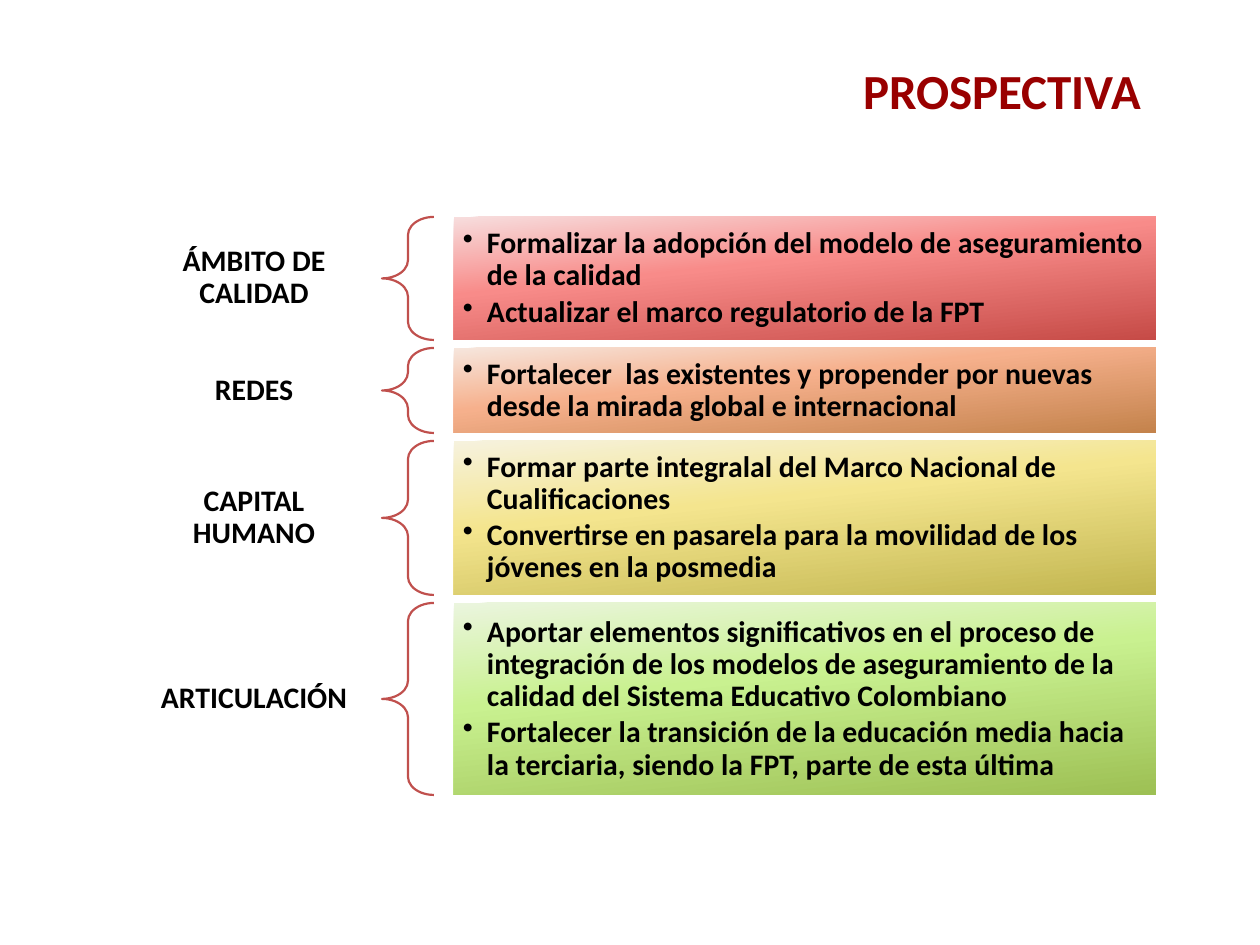
"""Build the PROSPECTIVA slide: labels, braces and shaded goal panels."""
import copy
import dataclasses

import lxml.etree
import pptx
import pptx.dml.color
import pptx.enum.shapes
import pptx.enum.text
import pptx.oxml.ns
import pptx.util

SHAPE = pptx.enum.shapes.MSO_SHAPE
ALIGN = pptx.enum.text.PP_ALIGN
ANCHOR = pptx.enum.text.MSO_ANCHOR
SCALE = 914400 / 126


@dataclasses.dataclass
class Theme:
    font: str = "Calibri"
    head: int = 28
    body: int = 17
    title: str = "990000"
    ink: str = "000000"
    line: str = "C0504D"
    red: tuple = ("F7DDDD", "F88B89", "C64B47")
    orange: tuple = ("F6E6DD", "F6B08C", "C4834C")
    gold: tuple = ("F6F2DE", "F4E58E", "C2B650")
    green: tuple = ("EBF5DE", "C9F190", "9DC054")


def px(size):
    return pptx.util.Emu(round(size * SCALE))


def rgb(code):
    return pptx.dml.color.RGBColor.from_string(code)


def write(frame, lines, *, font, size, color, align=ALIGN.LEFT,
          anchor=ANCHOR.MIDDLE, pad=(9, 9), space=1.0, gap=0, bullet=False):
    frame.word_wrap = True
    frame.vertical_anchor = anchor
    frame.margin_left = frame.margin_right = px(pad[0])
    frame.margin_top = frame.margin_bottom = px(pad[1])
    for i, line in enumerate(lines):
        para = frame.add_paragraph() if i else frame.paragraphs[0]
        para.alignment = align
        para.line_spacing = space
        if i:
            para.space_before = pptx.util.Pt(gap)
        if bullet:
            props = para._p.get_or_add_pPr()
            props.set("marL", str(px(24)))
            props.set("indent", str(-px(24)))
            mark = lxml.etree.SubElement(props, pptx.oxml.ns.qn("a:buChar"))
            mark.set("char", "•")
        run = para.add_run()
        run.text = line
        run.font.name = font
        run.font.size = pptx.util.Pt(size)
        run.font.bold = True
        run.font.color.rgb = rgb(color)


class Deck:
    def __init__(self, theme):
        self.theme = theme
        self.show = pptx.Presentation()
        self.show.slide_width, self.show.slide_height = px(1260), px(945)
        self.slide = self.show.slides.add_slide(self.show.slide_layouts[6])

    def text(self, box, line, **form):
        item = self.slide.shapes.add_textbox(*map(px, box))
        write(item.text_frame, [line], font=self.theme.font,
              align=ALIGN.CENTER, **form)

    def shape(self, kind, box):
        item = self.slide.shapes.add_shape(kind, *map(px, box))
        item.shadow.inherit = False
        return item

    def title(self, box, line):
        self.text(box, line, size=self.theme.head, color=self.theme.title,
                  anchor=ANCHOR.TOP, pad=(13, 6))

    def label(self, box, line):
        self.text(box, line, size=self.theme.body, color=self.theme.ink,
                  pad=(17, 6), space=0.9)

    def brace(self, box):
        item = self.shape(SHAPE.LEFT_BRACE, box)
        item.adjustments[0], item.adjustments[1] = 0.35, 0.5
        item.fill.background()
        item.line.color.rgb = rgb(self.theme.line)
        item.line.width = pptx.util.Pt(1.25)

    def panel(self, box, goals, tones):
        item = self.shape(SHAPE.RECTANGLE, box)
        item.line.fill.background()
        item.fill.gradient()
        item.fill.gradient_angle = 276
        first = item.fill.gradient_stops[0]._gs
        first.addnext(copy.deepcopy(first))
        for stop, tone, place in zip(item.fill.gradient_stops, tones, (0, 0.4, 1)):
            stop.color.rgb = rgb(tone)
            stop.position = place
        write(item.text_frame, goals, font=self.theme.font,
              size=self.theme.body, color=self.theme.ink, space=0.9,
              gap=2.5, bullet=True)


def main():
    theme = Theme()
    deck = Deck(theme)
    deck.title((779, 55, 446, 89), "PROSPECTIVA")
    rows = [
        ("ÁMBITO DE CALIDAD", 78, 123, theme.red, [
            "Formalizar la adopción del modelo de aseguramiento de la calidad",
            "Actualizar el marco regulatorio de la FPT"]),
        ("REDES", 47, 85, theme.orange, [
            "Fortalecer  las existentes y propender por nuevas desde la mirada "
            "global e internacional"]),
        ("CAPITAL HUMANO", 78, 154, theme.gold, [
            "Formar parte integralal del Marco Nacional de Cualificaciones",
            "Convertirse en pasarela para la movilidad de los jóvenes en la "
            "posmedia"]),
        ("ARTICULACIÓN", 47, 192, theme.green, [
            "Aportar elementos significativos en el proceso de integración de "
            "los modelos de aseguramiento de la calidad del Sistema Educativo "
            "Colombiano",
            "Fortalecer la transición de la educación media hacia la "
            "terciaria, siendo la FPT, parte de esta última"]),
    ]
    top, gap = 217, 8
    for name, tall, high, tones, goals in rows:
        deck.label((125, top + (high - tall) // 2, 258, tall), name)
        deck.brace((382, top, 52, high))
        deck.panel((454, top, 702, high), goals, tones)
        top += high + gap
    deck.show.save("out.pptx")


if __name__ == "__main__":
    main()
